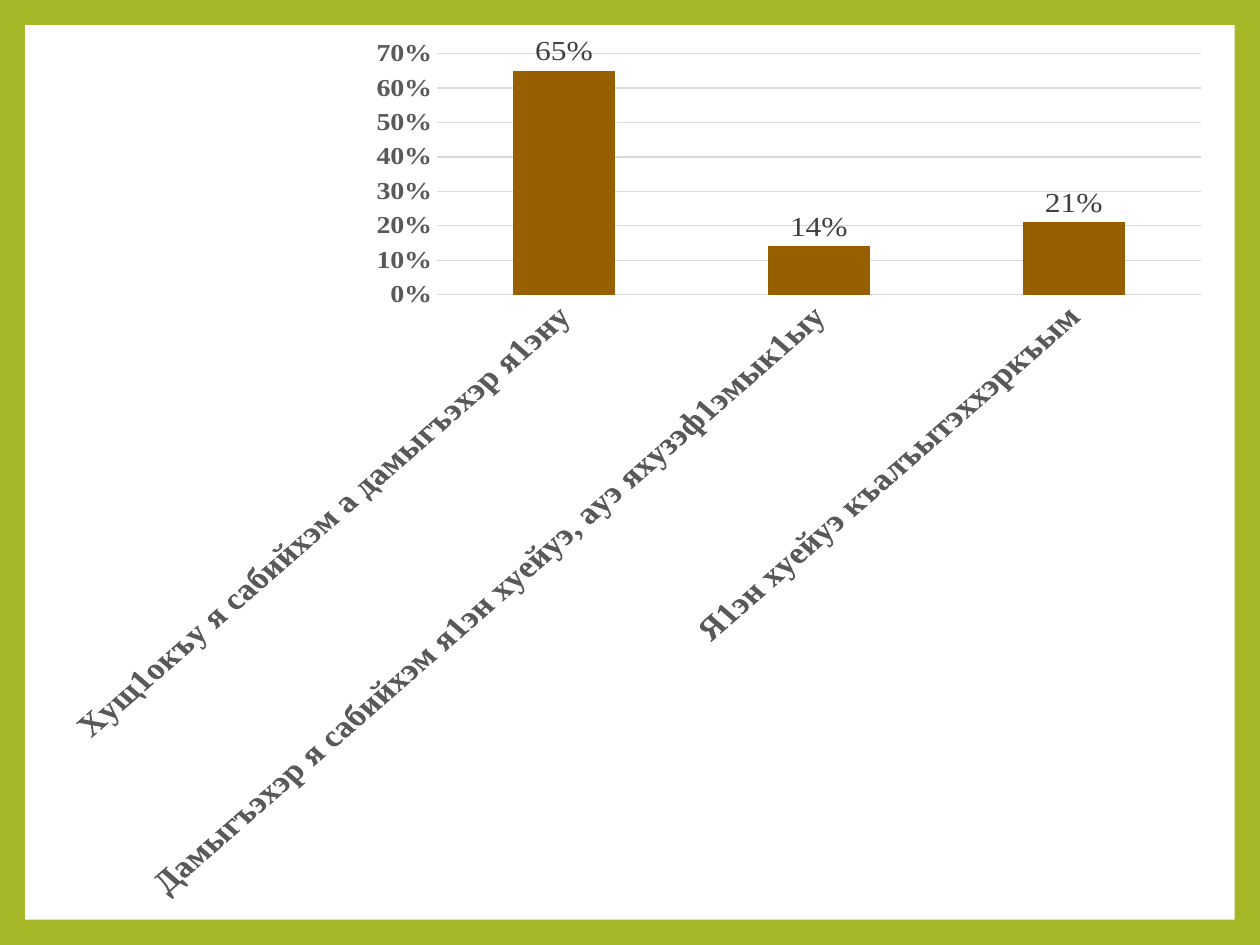
from pptx import Presentation
from pptx.chart.data import CategoryChartData
from pptx.dml.color import RGBColor
from pptx.enum.chart import XL_CHART_TYPE, XL_LABEL_POSITION, XL_TICK_MARK
from pptx.enum.shapes import MSO_SHAPE
from pptx.util import Cm, Pt

COLORS = {
    "frame": "A6B727",
    "panel": "FFFFFF",
    "bar": "985F00",
    "axis": "595959",
    "label": "404040",
    "grid": "D9D9D9",
    "text": "000000",
}
SERIF = "Times New Roman"
ANSWERS = {
    "Хущ1окъу я сабийхэм а дамыгъэхэр я1эну": 0.65,
    "Дамыгъэхэр я сабийхэм я1эн хуейуэ, ауэ яхузэф1эмык1ыу": 0.14,
    "Я1эн хуейуэ къалъытэххэркъым": 0.21,
}


def rgb(name):
    return RGBColor.from_string(COLORS[name])


def style_font(font, size, color, name=SERIF, bold=False):
    font.size, font.name, font.bold = Pt(size), name, bold
    font.color.rgb = rgb(color)


def style_line(line):
    line.color.rgb = rgb("grid")
    line.width = Pt(0.75)


def style_axis(axis, size):
    axis.major_tick_mark = axis.minor_tick_mark = XL_TICK_MARK.NONE
    style_font(axis.tick_labels.font, size, "axis", bold=True)


def add_panel(s, left, top, width, height):
    s.background.fill.solid()
    s.background.fill.fore_color.rgb = rgb("frame")
    sp = s.shapes.add_shape(MSO_SHAPE.RECTANGLE, left, top, width, height)
    sp.shadow.inherit = False
    sp.fill.solid()
    sp.fill.fore_color.rgb = rgb("panel")
    sp.line.fill.background()


def add_answers_chart(s, left, top, width, height):
    data = CategoryChartData(number_format="0%")
    data.categories = list(ANSWERS)
    data.add_series("Series 1", list(ANSWERS.values()))
    chart = s.shapes.add_chart(
        XL_CHART_TYPE.COLUMN_CLUSTERED, left, top, width, height, data
    ).chart
    chart.has_legend = chart.has_title = False
    style_font(chart.font, 10, "text", "Cabin")

    cat_axis, val_axis = chart.category_axis, chart.value_axis
    style_axis(cat_axis, 20)
    style_line(cat_axis.format.line)
    body = cat_axis.tick_labels.font._element.getroottree().find(
        ".//{*}catAx/{*}txPr/{*}bodyPr"
    )
    body.set("rot", "-2700000")
    body.set("vert", "horz")

    style_axis(val_axis, 16)
    val_axis.format.line.fill.background()
    val_axis.has_major_gridlines = True
    style_line(val_axis.major_gridlines.format.line)
    val_axis.tick_labels.number_format = "0%"
    val_axis.tick_labels.number_format_is_linked = False

    plot = chart.plots[0]
    plot.gap_width = 150
    plot.vary_by_categories = False
    fill = plot.series[0].format.fill
    fill.solid()
    fill.fore_color.rgb = rgb("bar")
    labels = plot.series[0].data_labels
    labels.show_value = True
    labels.position = XL_LABEL_POSITION.OUTSIDE_END
    labels.number_format = "0%"
    labels.number_format_is_linked = False
    style_font(labels.font, 18, "label")


def main():
    prs = Presentation()
    prs.slide_width, prs.slide_height = Cm(25.4), Cm(19.05)
    s = prs.slides.add_slide(prs.slide_layouts[6])
    margin = Cm(0.51)
    add_panel(s, margin, margin,
              prs.slide_width - 2 * margin, prs.slide_height - 2 * margin)
    add_answers_chart(s, Cm(0.89), Cm(0.74), Cm(23.8), Cm(17.4))
    prs.save("out.pptx")


if __name__ == "__main__":
    main()
